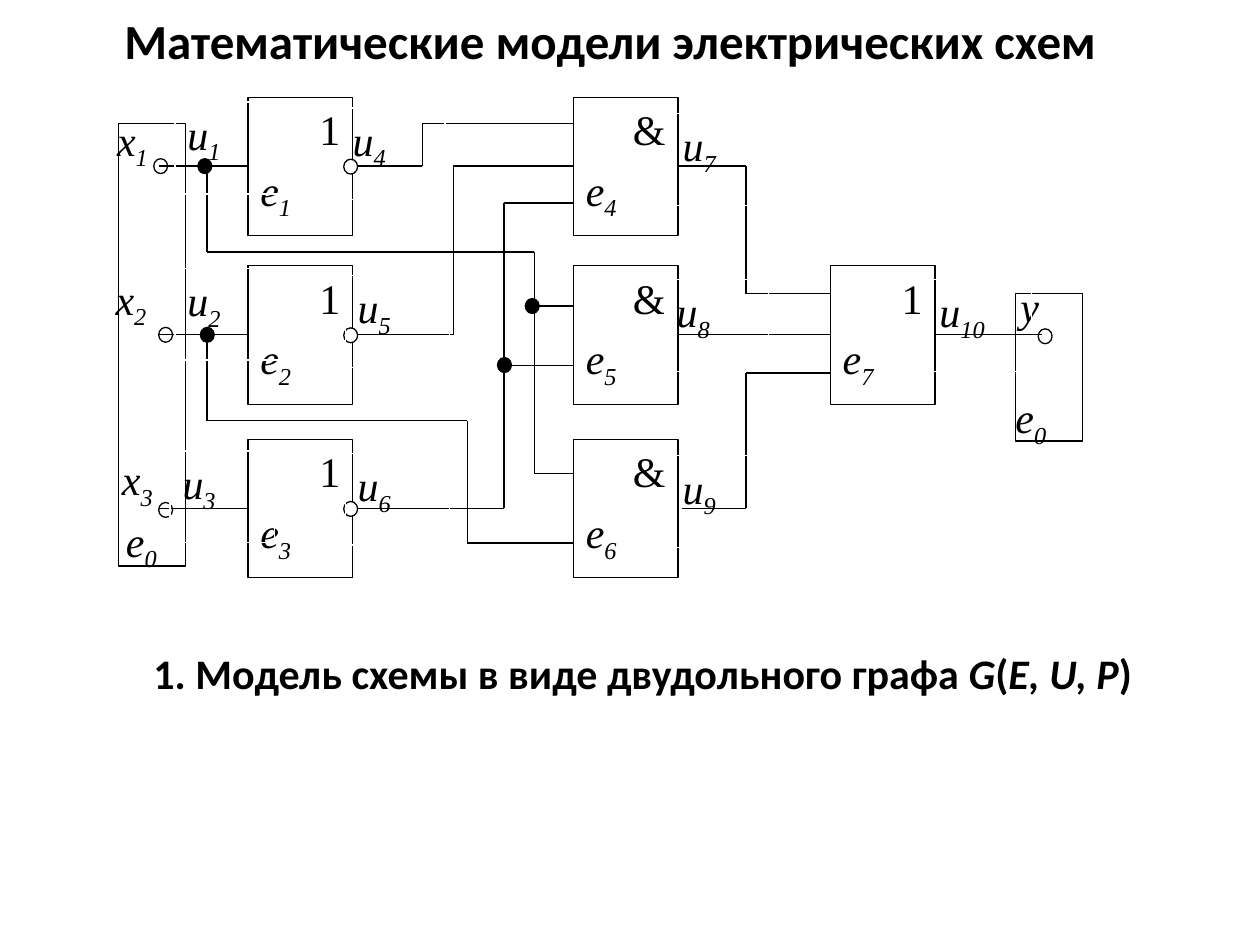
from dataclasses import dataclass
from itertools import pairwise

from lxml import etree
from pptx import Presentation
from pptx.dml.color import RGBColor
from pptx.enum.shapes import MSO_CONNECTOR, MSO_SHAPE
from pptx.enum.text import MSO_ANCHOR, PP_ALIGN
from pptx.oxml.ns import qn
from pptx.util import Cm, Pt

RECT, OVAL = MSO_SHAPE.RECTANGLE, MSO_SHAPE.OVAL
STRAIGHT = MSO_CONNECTOR.STRAIGHT
TOP, MIDDLE = MSO_ANCHOR.TOP, MSO_ANCHOR.MIDDLE
LEFT, CENTER, RIGHT = PP_ALIGN.LEFT, PP_ALIGN.CENTER, PP_ALIGN.RIGHT


@dataclass(frozen=True)
class Theme:
    """Colours, fonts and sizes of the slide."""
    ink: RGBColor = RGBColor(0, 0, 0)
    paper: RGBColor = RGBColor(255, 255, 255)
    heading_font: str = "Calibri"
    symbol_font: str = "Times New Roman"
    title_size: Pt = Pt(28)
    body_size: Pt = Pt(24)
    stroke: Pt = Pt(0.75)


THEME = Theme()
TITLE_FORMAT = {"name": THEME.heading_font, "size": THEME.title_size, "bold": True}
CAPTION_FORMAT = {"name": THEME.heading_font, "size": THEME.body_size, "bold": True}
SYMBOL_FORMAT = {"name": THEME.symbol_font, "size": THEME.body_size}
ITALIC = {"italic": True}

GATE_SIZE = (2.11, 2.79)
LABEL_SIZE = (2.11, 1.85)
NODE_SIZE = (0.28, 0.3)
ROWS = (0, 3.4, 6.9)
SIGNALS = [row + 1.39 for row in ROWS]
INVERTER_X, AND_X, OR_X = 2.92, 9.48, 14.66

GATES = (
    [("1", str(i + 1), INVERTER_X, row) for i, row in enumerate(ROWS)]
    + [("&", str(i + 4), AND_X, row) for i, row in enumerate(ROWS)]
    + [("1", "7", OR_X, ROWS[1])]
)
TERMINALS = [(0.31, 0.53, 1.35, 8.92), (18.39, 3.96, 1.35, 2.97)]
OPEN_NODES = [(1.02, 1.24), (1.12, 4.64), (1.12, 8.17), (18.85, 4.67)]
OPEN_NODES += [(4.85, signal - 0.14) for signal in SIGNALS]
JUNCTIONS = [(1.91, 1.24), (1.96, 4.64), (7.95, 5.25), (8.51, 4.06)]

TOP_SIGNAL, MID_SIGNAL, LOW_SIGNAL = SIGNALS
WIRES = [[(1.12, signal), (INVERTER_X, signal)] for signal in SIGNALS] + [
    [(5.13, TOP_SIGNAL), (6.43, TOP_SIGNAL), (6.43, 0.53), (AND_X, 0.53)],
    [(5.13, MID_SIGNAL), (6.43, MID_SIGNAL), (7.06, MID_SIGNAL),
     (7.06, TOP_SIGNAL), (7.7, TOP_SIGNAL), (AND_X, TOP_SIGNAL)],
    [(5.13, LOW_SIGNAL), (6.43, LOW_SIGNAL), (8.08, LOW_SIGNAL),
     (8.08, 2.13), (AND_X, 2.13)],
    [(8.08, 5.41), (AND_X, 5.41)],
    [(2.09, TOP_SIGNAL), (2.09, 3.12), (8.69, 3.12), (8.69, 4.21),
     (8.69, 7.59), (AND_X, 7.59)],
    [(8.69, 4.21), (AND_X, 4.21)],
    [(2.09, MID_SIGNAL), (2.09, 6.52), (7.34, 6.52), (7.34, 8.99), (AND_X, 8.99)],
    [(11.59, TOP_SIGNAL), (12.96, TOP_SIGNAL), (12.96, 3.96), (OR_X, 3.96)],
    [(11.59, MID_SIGNAL), (12.88, MID_SIGNAL), (OR_X, MID_SIGNAL)],
    [(11.66, LOW_SIGNAL), (12.96, LOW_SIGNAL), (12.96, 5.56), (OR_X, 5.56)],
    [(16.77, MID_SIGNAL), (18.06, MID_SIGNAL)],
]
OUTPUT_WIRE = [(17.81, MID_SIGNAL), (18.93, MID_SIGNAL)]

TERMINAL_LABELS = [
    ("y", "", 18.24, 3.58), ("x", "3", 0.13, 7.06), ("e", "0", 18.14, 5.81),
    ("e", "0", 0.21, 8.3), ("x", "2", 0, 3.42), ("x", "1", 0.03, 0.22),
]
SIGNAL_PLACES = [
    (1.45, 0.1), (1.45, 3.45), (1.35, 7.13), (4.78, 0.22), (4.88, 3.6),
    (4.88, 7.18), (11.43, 0.33), (11.31, 3.68), (11.43, 7.23), (16.61, 3.68),
]
SIGNAL_LABELS = [("u", str(i), *place) for i, place in enumerate(SIGNAL_PLACES, 1)]


def apply(target, formats):
    """Set every attribute of the target named in formats."""
    for attribute, value in formats.items():
        setattr(target, attribute, value)


def write(paragraph, pieces, base, layout):
    """Write (text, extra format, baseline) pieces into a paragraph."""
    apply(paragraph, layout)
    for text, extra, baseline in pieces:
        run = paragraph.add_run()
        run.text = text
        apply(run.font, base | extra)
        run.font.color.rgb = THEME.ink
        if baseline:
            run._r.get_or_add_rPr().set("baseline", str(baseline))


def indexed(letter, index):
    """Return the pieces of an italic letter with a subscript."""
    pieces = [(letter, ITALIC, 0), (index, ITALIC, -25000)]
    return pieces if index else pieces[:1]


def add_outline(slide, kind, box, offset, size, line, fill=None):
    """Add an outlined shape at an offset inside the box."""
    place = [Cm(value) for value in (box[0] + offset[0], box[1] + offset[1], *size)]
    outline = slide.shapes.add_shape(kind, *place)
    outline.shadow.inherit = False
    apply(outline.line, {"width": THEME.stroke})
    outline.line.color.rgb = line
    if fill is None:
        outline.fill.background()
    else:
        outline.fill.solid()
        outline.fill.fore_color.rgb = fill
    apply(outline.text_frame, {"vertical_anchor": TOP, "word_wrap": True})
    return outline


def add_wire(slide, box, points):
    """Join the points with straight segments."""
    for start, end in pairwise(points):
        ends = [Cm(box[i] + point[i]) for point in (start, end) for i in (0, 1)]
        segment = slide.shapes.add_connector(STRAIGHT, *ends)
        apply(segment.line, {"width": THEME.stroke})
        segment.line.color.rgb = THEME.ink
        etree.SubElement(segment._element.spPr, qn("a:effectLst"))


def add_gate(slide, box, function, index, offset):
    """Add a logic gate with its function and element name."""
    gate = add_outline(slide, RECT, box, offset, GATE_SIZE, THEME.ink, THEME.paper)
    frame = gate.text_frame
    write(frame.paragraphs[0], [(function, {}, 0)], SYMBOL_FORMAT, {"alignment": RIGHT})
    write(frame.add_paragraph(), indexed("е", index), SYMBOL_FORMAT,
          {"alignment": LEFT, "space_before": Pt(6)})


def add_labels(slide, box, labels):
    """Add the names of terminals or signals."""
    for letter, index, *offset in labels:
        label = add_outline(slide, RECT, box, offset, LABEL_SIZE, THEME.paper)
        write(label.text_frame.paragraphs[0], indexed(letter, index), SYMBOL_FORMAT,
              {"alignment": LEFT, "space_after": Pt(10)})


def add_circuit(slide, box):
    """Draw the logic circuit inside the box."""
    add_labels(slide, box, TERMINAL_LABELS)
    for function, index, *offset in GATES:
        add_gate(slide, box, function, index, offset)
    for nodes, fill in ((OPEN_NODES, THEME.paper), (JUNCTIONS, THEME.ink)):
        for offset in nodes:
            add_outline(slide, OVAL, box, offset, NODE_SIZE, THEME.ink, fill)
    for wire in WIRES:
        add_wire(slide, box, wire)
    for left, top, *size in TERMINALS:
        add_outline(slide, RECT, box, (left, top), size, THEME.ink)
    add_labels(slide, box, SIGNAL_LABELS)
    add_wire(slide, box, OUTPUT_WIRE)


def add_heading(slide, box, pieces, base, anchor):
    """Add a centred line of heading text filling the box."""
    heading = slide.shapes.add_textbox(*map(Cm, box))
    apply(heading.text_frame, {"word_wrap": True, "vertical_anchor": anchor})
    write(heading.text_frame.paragraphs[0], pieces, base, {"alignment": CENTER})


def main():
    """Build and save the slide."""
    deck = Presentation()
    apply(deck, {"slide_width": Cm(25.4), "slide_height": Cm(19.05)})
    slide = deck.slides.add_slide(deck.slide_layouts[6])
    add_heading(slide, (1.5, 0, 21.59, 1.6),
                [("Математические модели электрических схем", {}, 0)],
                TITLE_FORMAT, MIDDLE)
    add_circuit(slide, (2.08, 1.96))
    add_heading(slide, (0.51, 12.93, 24.89, 2.31),
                [("1. Модель схемы в виде двудольного графа ", {}, 0),
                 ("G", ITALIC, 0), ("(", {}, 0), ("E, U, P", ITALIC, 0), (")", {}, 0)],
                CAPTION_FORMAT, TOP)
    deck.save("out.pptx")


if __name__ == "__main__":
    main()
